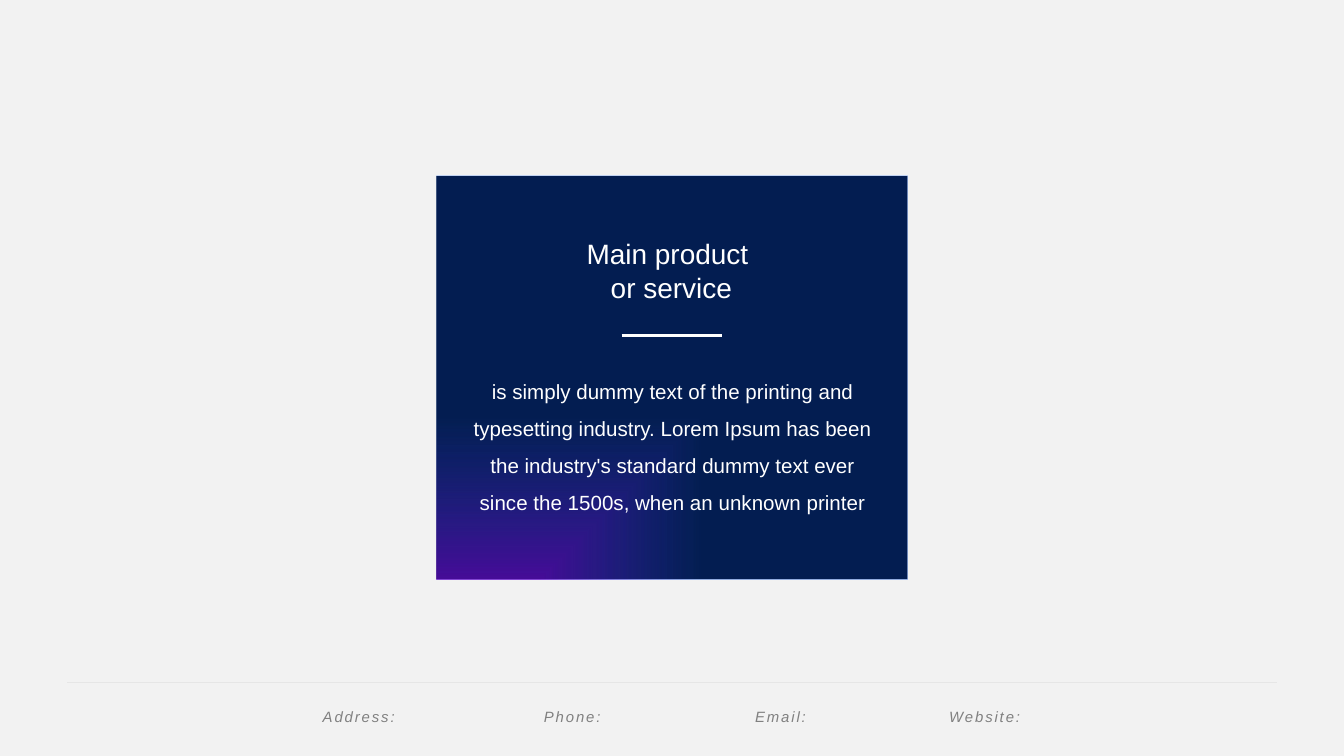
import pptx
import pptx.dml.color
import pptx.enum.shapes
import pptx.enum.text
import pptx.oxml
import pptx.oxml.ns
import pptx.util

Cm = pptx.util.Cm
Pt = pptx.util.Pt
Align = pptx.enum.text.PP_ALIGN
Anchor = pptx.enum.text.MSO_ANCHOR


def color(value):
    return pptx.dml.color.RGBColor.from_string(value)


def element(markup):
    """Parse markup whose root is in the drawing namespace."""
    root, rest = markup.split(" ", 1)
    return pptx.oxml.parse_xml(f"{root} {pptx.oxml.ns.nsdecls('a')} {rest}")


class Canvas:
    font = "Arial"
    background = "F2F2F2"
    light = "FFFFFF"
    rule = "E6E6E6"
    muted = "808080"

    def __init__(self, slide):
        self.slide = slide
        slide.background.fill.solid()
        slide.background.fill.fore_color.rgb = color(self.background)

    def rectangle(self, left, top, width, height, fill=None):
        shape = self.slide.shapes.add_shape(
            pptx.enum.shapes.MSO_SHAPE.RECTANGLE, Cm(left), Cm(top), Cm(width), Cm(height))
        shape.shadow.inherit = False
        shape.line.fill.background()
        if fill:
            shape.fill.solid()
            shape.fill.fore_color.rgb = color(fill)
        return shape

    def corner_glow(self, left, top, width, height, stops):
        """Rectangle with a gradient from its lower left; stops are (percent, hex, opacity)."""
        shape = self.rectangle(left, top, width, height)
        marks = "".join(
            f'<a:gs pos="{place * 1000}"><a:srgbClr val="{tint}">'
            f'<a:alpha val="{opacity * 1000}"/></a:srgbClr></a:gs>'
            for place, tint, opacity in stops)
        gradient = element(
            f'<a:gradFill rotWithShape="1"><a:gsLst>{marks}</a:gsLst>'
            '<a:path path="rect"><a:fillToRect t="100000" r="100000"/></a:path></a:gradFill>')
        shape.element.spPr.find(pptx.oxml.ns.qn("a:prstGeom")).addnext(gradient)

    def line(self, left, right, y, tint, weight):
        connector = self.slide.shapes.add_connector(
            pptx.enum.shapes.MSO_CONNECTOR.STRAIGHT, Cm(left), Cm(y), Cm(right), Cm(y))
        connector.line.color.rgb = color(tint)
        connector.line.width = Pt(weight)
        connector.element.spPr.append(element("<a:effectLst />"))

    def text(self, left, top, width, height, content, size, tint, align=Align.CENTER,
             anchor=Anchor.TOP, insets=(0.25, 0.13, 0.25, 0.13), spacing=None, before=None):
        box = self.slide.shapes.add_textbox(Cm(left), Cm(top), Cm(width), Cm(height))
        frame = box.text_frame
        frame.word_wrap = True
        frame.auto_size = pptx.enum.text.MSO_AUTO_SIZE.SHAPE_TO_FIT_TEXT
        frame.vertical_anchor = anchor
        (frame.margin_left, frame.margin_top,
         frame.margin_right, frame.margin_bottom) = map(Cm, insets)
        frame.text = content
        for para in frame.paragraphs:
            para.alignment = align
            if spacing:
                para.line_spacing = spacing
            if before:
                para.space_before = Pt(before)
            for span in para.runs:
                span.font.name = self.font
                span.font.size = Pt(size)
                span.font.color.rgb = color(tint)
        return frame.paragraphs

    def contacts(self, left, top, width, height, labels, indent, stops):
        """One line of spaced italic labels, set apart by tab stops."""
        para = self.text(left, top, width, height, "\t".join(labels), 8, self.muted,
                         Align.LEFT, Anchor.MIDDLE, (indent, 0.13, 0, 0.13), 0.9, 7.5)[0]
        tabs = "".join(f'<a:tab pos="{Cm(stop)}" algn="l"/>' for stop in stops)
        para.runs[0].font.italic = True
        para.runs[0].font._element.set("spc", "100")
        para._p.get_or_add_pPr().append(element(f"<a:tabLst >{tabs}</a:tabLst>"))


def main():
    deck = pptx.Presentation()
    deck.slide_width, deck.slide_height = Cm(25.4), Cm(14.29)
    canvas = Canvas(deck.slides.add_slide(deck.slide_layouts[6]))

    card = (8.25, 3.33, 8.9, 7.62)
    canvas.rectangle(*card, fill="000000")
    canvas.corner_glow(*card, stops=[(0, "7600CB", 80), (98, "0B5DF9", 32)])
    canvas.text(8.23, 4.34, 8.92, 1.55, "Main product \nor service", 15, canvas.light,
                anchor=Anchor.MIDDLE)
    canvas.text(8.92, 6.93, 7.59, 2.82,
                "is simply dummy text of the printing and typesetting industry. "
                "Lorem Ipsum has been the industry's standard dummy text ever "
                "since the 1500s, when an unknown printer",
                11, canvas.light, insets=(0, 0, 0, 0), spacing=1.5, before=7.5)
    canvas.line(11.75, 13.65, 6.34, canvas.light, 2)

    canvas.line(1.27, 24.13, 12.9, canvas.rule, 0.75)
    canvas.contacts(1.27, 13.28, 22.86, 0.56, ["Address:", "Phone:", "Email:", "Website:"],
                    indent=4.83, stops=[4.18, 8.17, 11.84])
    deck.save("out.pptx")


if __name__ == "__main__":
    main()
